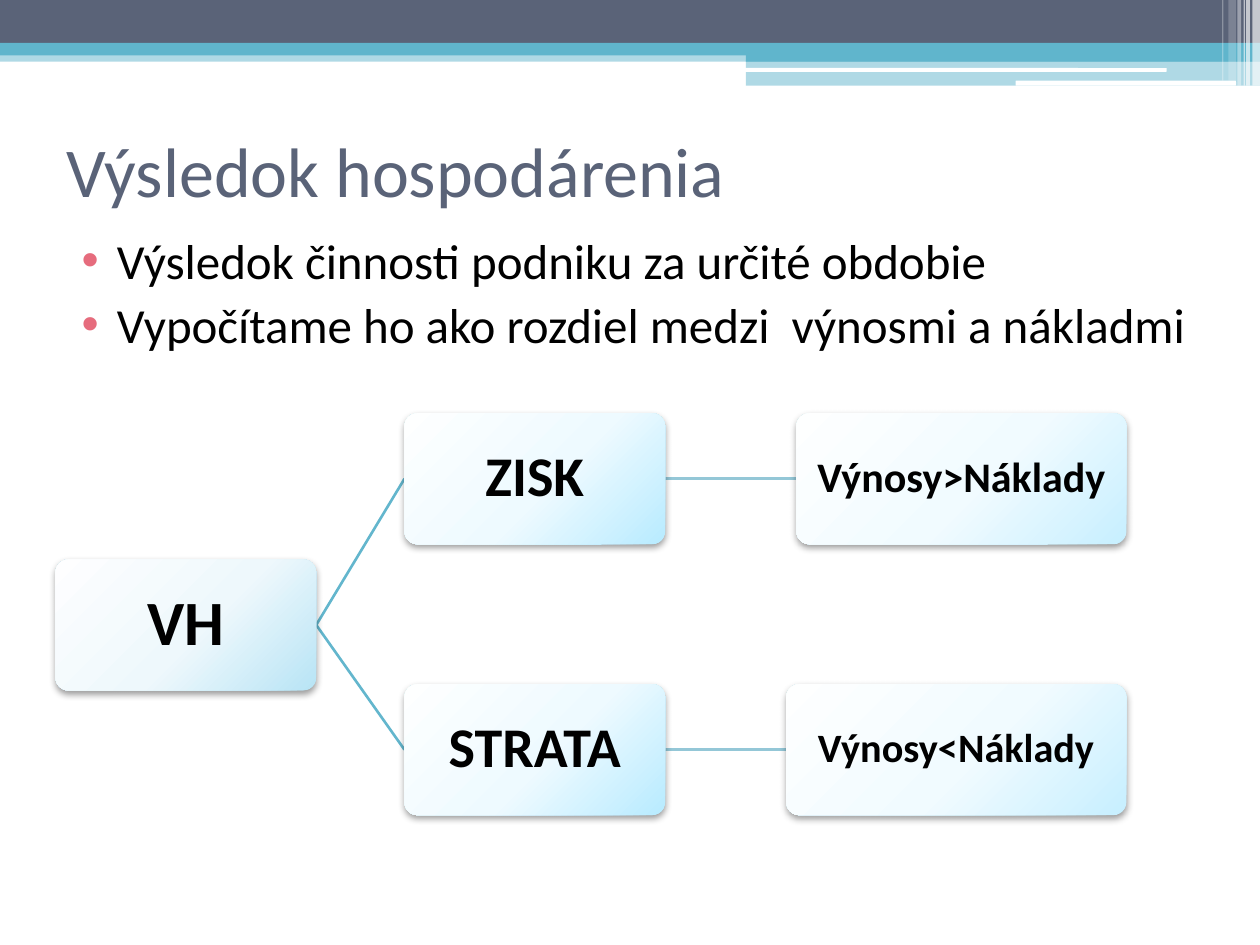
"""Build a slide on profit and loss as a small tree of linked boxes."""
import pptx
import pptx.util
import pptx.dml.color
import pptx.enum.shapes
import pptx.enum.text
import pptx.oxml
import pptx.oxml.ns

Inches = pptx.util.Inches
Pt = pptx.util.Pt
KIND = pptx.enum.shapes.MSO_SHAPE
ALIGN = pptx.enum.text.PP_ALIGN
MIDDLE = pptx.enum.text.MSO_ANCHOR.MIDDLE
NS = pptx.oxml.ns.nsdecls("a")
HUE = {"slate": "5A6378", "teal": "60B5CC", "white": "FFFFFF", "black": "000000",
       "rose": "E66C7D", "link": "63B6CD", "pale": "94C7D7"}
SHADE = {"root": ("FEFEFF", "EEF8FC", "B8E4F5"),
         "kind": ("FEFFFF", "EEFAFF", "B8EBFF"),
         "rule": ("FEFFFF", "F1FBFF", "C7EFFF")}
BANDS = [
    (0, 0.4, 10, 0.09, "teal", 50),
    (0, 0, 10, 0.34, "slate", 100),
    (0, 0.34, 10, 0.1, "teal", 100),
    (5.92, 0.39, 4.08, 0.1, "teal", 100),
    (5.92, 0.48, 4.08, 0.2, "teal", 50),
]
PILLS = [(5.91, 0.54, 3.35, 0.03), (8.06, 0.64, 1.75, 0.04)]
STRIPES = [(9.94, 0.06, 0.68, 65), (9.89, 0.03, 0.68, 65), (9.87, 0.01, 0.68, 60),
           (9.82, 0.03, 0.68, 40), (9.75, 0.06, 0.64, 20), (9.7, 0.01, 0.64, 30)]
NODES = {
    "VH": (0.44, 4.44, 2.07, "root", 36),
    "ZISK": (3.21, 3.28, 2.07, "kind", 32),
    "Výnosy>Náklady": (6.32, 3.28, 2.62, "rule", 24),
    "STRATA": (3.21, 5.43, 2.07, "kind", 32),
    "Výnosy<Náklady": (6.24, 5.43, 2.7, "rule", 23),
}
LINKS = [("VH", "ZISK", "link"), ("ZISK", "Výnosy>Náklady", "pale"),
         ("VH", "STRATA", "link"), ("STRATA", "Výnosy<Náklady", "pale")]
TALL = 1.04


def put(item, vals):
    """Set each named value on an object."""
    for name, val in vals.items():
        setattr(item, name, val)


def tint(name):
    """Return the named colour."""
    return pptx.dml.color.RGBColor.from_string(HUE[name])


def node_xml(text):
    """Parse a drawing element written without its namespace."""
    head, tail = text.split(">", 1)
    close = "/" if head.endswith("/") else ""
    return pptx.oxml.parse_xml(f"{head.rstrip('/')} {NS}{close}>{tail}")


def shape(slide, kind, box, round_by=None):
    """Add a preset shape with no outline and no shadow."""
    item = slide.shapes.add_shape(kind, *map(Inches, box))
    item.line.fill.background()
    item.shadow.inherit = False
    if round_by is not None:
        item.adjustments[0] = round_by
    return item


def paint(item, name, alpha=100):
    """Fill a shape with one colour at a given opacity."""
    item.fill.solid()
    item.fill.fore_color.rgb = tint(name)
    if alpha < 100:
        color = item.fill._xPr.find(".//" + pptx.oxml.ns.qn("a:srgbClr"))
        color.append(node_xml(f'<a:alpha val="{alpha * 1000}"/>'))


def glow(item, shade):
    """Give a shape a radial gradient and a soft shadow below."""
    stops = "".join(f'<a:gs pos="{at * 1000}"><a:srgbClr val="{hue}"/></a:gs>'
                    for at, hue in zip((0, 55, 100), SHADE[shade]))
    props = item._element.spPr
    props.find(pptx.oxml.ns.qn("a:ln")).addprevious(node_xml(
        f'<a:gradFill rotWithShape="1"><a:gsLst>{stops}</a:gsLst><a:path path="circle">'
        '<a:fillToRect l="-40000" t="-90000" r="140000" b="190000"/></a:path></a:gradFill>'))
    props.find(pptx.oxml.ns.qn("a:effectLst")).append(node_xml(
        f'<a:outerShdw blurRad="{Pt(4.1)}" dist="{Pt(2)}" dir="5400000" rotWithShape="0">'
        f'<a:srgbClr val="{HUE["black"]}"><a:alpha val="40000"/></a:srgbClr></a:outerShdw>'))


def write(para, text, size, hue, bold=False):
    """Write one run of styled text in a paragraph."""
    run = para.add_run()
    run.text = text
    put(run.font, {"name": "Calibri", "size": Pt(size), "bold": bold})
    run.font.color.rgb = tint(hue)


def frame(slide, box, vals):
    """Add a wrapping text box and return its text frame."""
    text = slide.shapes.add_textbox(*map(Inches, box)).text_frame
    put(text, {"word_wrap": True, **vals})
    return text


def list_up(text, lines):
    """Fill a text frame with bulleted lines."""
    for rank, line in enumerate(lines):
        para = text.paragraphs[0] if rank == 0 else text.add_paragraph()
        para.space_before = Pt(3)
        props = para._p.get_or_add_pPr()
        props.set("marL", str(Inches(0.4)))
        props.set("indent", str(Inches(-0.28)))
        props.append(node_xml(f'<a:buClr><a:srgbClr val="{HUE["rose"]}"/></a:buClr>'))
        props.append(node_xml('<a:buFont typeface="Arial"/>'))
        props.append(node_xml('<a:buChar char="•"/>'))
        write(para, line, 28, "black")


def node(slide, label):
    """Add a labelled box of the tree."""
    left, top, wide, shade, size = NODES[label]
    item = shape(slide, KIND.ROUNDED_RECTANGLE, (left, top, wide, TALL), 0.1)
    glow(item, shade)
    sides = ("left", "right", "top", "bottom")
    put(item.text_frame, {"word_wrap": True, "vertical_anchor": MIDDLE,
                          **{f"margin_{side}": Inches(0.05) for side in sides}})
    para = item.text_frame.paragraphs[0]
    put(para, {"alignment": ALIGN.CENTER, "line_spacing": 0.9})
    write(para, label, size, "black", True)


def link(slide, start, end, hue):
    """Join the right side of one box to the left side of another."""
    left, top, wide = NODES[start][:3]
    goal, level = NODES[end][:2]
    ends = (left + wide, top + TALL / 2, goal, level + TALL / 2)
    line = slide.shapes.add_connector(
        pptx.enum.shapes.MSO_CONNECTOR.STRAIGHT, *map(Inches, ends))
    line.line.width = Pt(1.5)
    line.line.color.rgb = tint(hue)
    line._element.spPr.append(node_xml("<a:effectLst/>"))


def banner(slide):
    """Draw the bands, pills and stripes along the top edge."""
    for *box, hue, alpha in BANDS:
        paint(shape(slide, KIND.RECTANGLE, box), hue, alpha)
    for box in PILLS:
        paint(shape(slide, KIND.ROUNDED_RECTANGLE, box, 0.17), "white")
    for left, wide, tall, alpha in STRIPES:
        paint(shape(slide, KIND.RECTANGLE, (left, 0, wide, tall)), "white", alpha)


def main():
    """Build and save the slide."""
    deck = pptx.Presentation()
    put(deck, {"slide_width": Inches(10), "slide_height": Inches(7.5)})
    slide = deck.slides.add_slide(deck.slide_layouts[6])
    banner(slide)
    title = frame(slide, (0.43, 0.76, 9, 1.17), {"vertical_anchor": MIDDLE})
    write(title.paragraphs[0], "Výsledok hospodárenia", 40, "slate")
    list_up(frame(slide, (0.43, 1.78, 9.21, 1.34), {}), [
        "Výsledok činnosti podniku za určité obdobie",
        "Vypočítame ho ako rozdiel medzi  výnosmi a nákladmi"])
    for start, end, hue in LINKS:
        link(slide, start, end, hue)
    for label in NODES:
        node(slide, label)
    deck.save("out.pptx")


if __name__ == "__main__":
    main()
